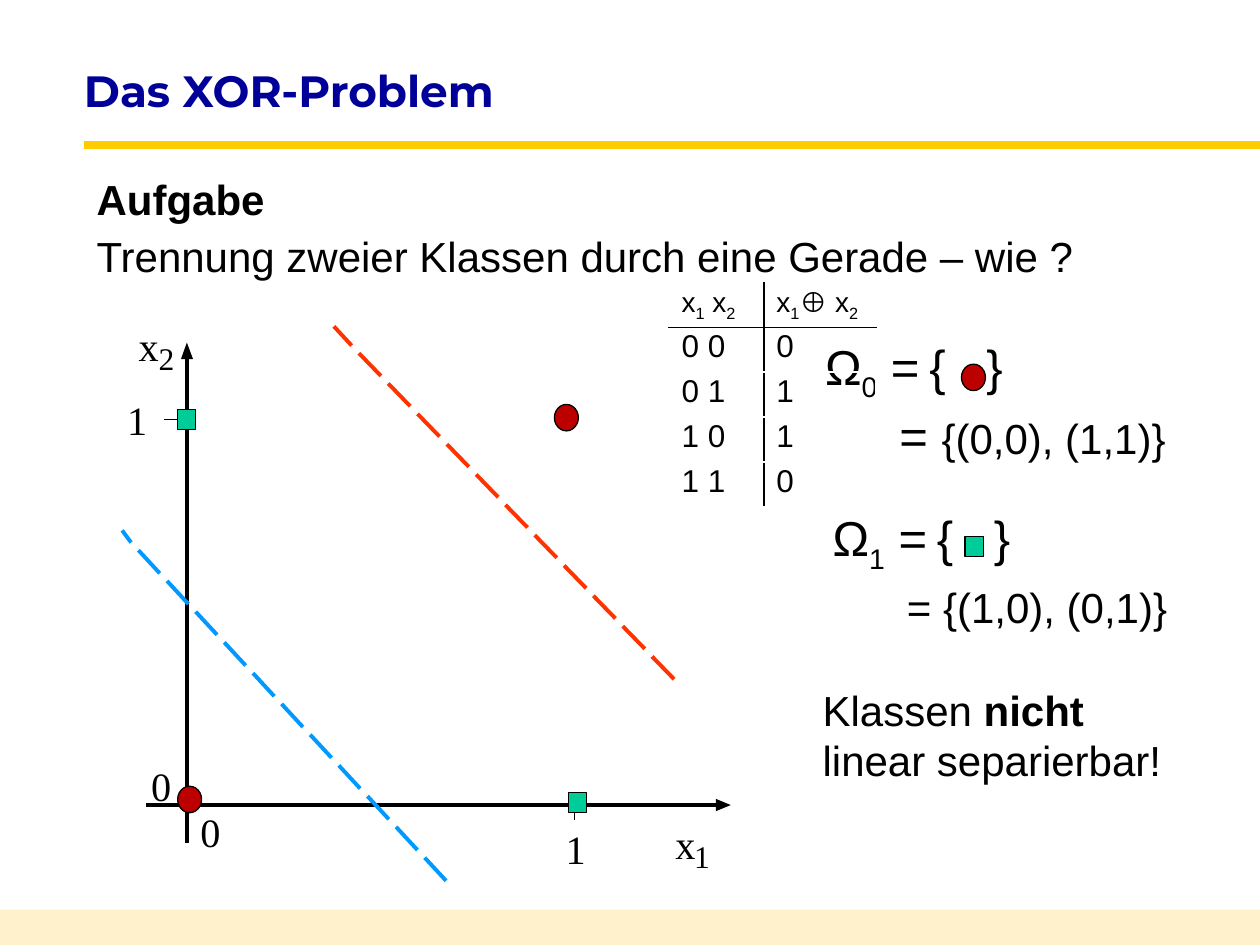
from dataclasses import dataclass

from lxml import etree
from pptx import Presentation
from pptx.dml.color import RGBColor
from pptx.enum.shapes import MSO_CONNECTOR, MSO_SHAPE
from pptx.enum.text import MSO_ANCHOR, MSO_AUTO_SIZE, PP_ALIGN
from pptx.oxml.ns import qn
from pptx.util import Pt

STRAIGHT = MSO_CONNECTOR.STRAIGHT
RECT, OVAL = MSO_SHAPE.RECTANGLE, MSO_SHAPE.OVAL
TOP, MIDDLE = MSO_ANCHOR.TOP, MSO_ANCHOR.MIDDLE
LEFT = PP_ALIGN.LEFT
NO_FIT = MSO_AUTO_SIZE.NONE


@dataclass(frozen=True)
class Theme:
    sans: str = "Arial"
    serif: str = "Times New Roman"
    head: str = "Montserrat"
    black: str = "000000"
    navy: str = "000099"
    gold: str = "FFCC00"
    cream: str = "FFE499"
    red: str = "BC0000"
    green: str = "00CC99"
    blue: str = "0099FF"
    flame: str = "FF3300"
    title: int = 25
    body: int = 24
    label: int = 23
    index: int = 18
    omega: int = 28
    thin: int = 20
    cell: int = 18
    top: int = 16


@dataclass
class Run:
    text: str
    size: int = 0
    bold: bool = False
    sub: bool = False
    track: float = 0


class Board:
    def __init__(self, slide, theme):
        self.slide, self.shapes, self.theme = slide, slide.shapes, theme

    def para(self, frame, runs, size, first=True, font=None, color=None,
             bold=False, line=None, gap=0, hang=0):
        p = frame.paragraphs[0] if first else frame.add_paragraph()
        p.alignment = LEFT
        if line:
            p.line_spacing = line
        p.space_before = Pt(gap)
        props = p._p.get_or_add_pPr()
        props.set("marL", str(Pt(hang)))
        props.set("indent", str(-Pt(hang)))
        etree.SubElement(props, qn("a:buNone"))
        p.font.name = font or self.theme.sans
        p.font.size = Pt(size)
        p.font.bold = bold
        p.font.color.rgb = RGBColor.from_string(color or self.theme.black)
        for item in runs:
            r = p.add_run()
            r.text = item.text
            if item.size:
                r.font.size = Pt(item.size)
            if item.bold:
                r.font.bold = True
            if item.sub:
                r._r.get_or_add_rPr().set("baseline", "-25000")
            if item.track:
                r._r.get_or_add_rPr().set("spc", str(round(item.track * 100)))

    def place(self, holder, left, top, width, height, anchor, inset=7.2):
        holder.left, holder.top = Pt(left), Pt(top)
        holder.width, holder.height = Pt(width), Pt(height)
        frame = holder.text_frame
        frame.word_wrap, frame.auto_size = True, NO_FIT
        frame.vertical_anchor = anchor
        frame.margin_left = Pt(inset)
        return frame

    def text(self, left, top, width, height):
        box = self.shapes.add_textbox(Pt(left), Pt(top), Pt(width), Pt(height))
        box.text_frame.word_wrap = True
        return box.text_frame

    def label(self, text, left, top, size):
        frame = self.text(left, top, size / 2, size * 1.18)
        frame.word_wrap = False
        frame.margin_left = frame.margin_right = 0
        frame.margin_top = frame.margin_bottom = 0
        self.para(frame, [Run(text)], size, font=self.theme.serif)

    def paint(self, shape, color, width=0):
        shape.shadow.inherit = False
        shape.fill.solid()
        shape.fill.fore_color.rgb = RGBColor.from_string(color)
        if width:
            shape.line.color.rgb = RGBColor.from_string(self.theme.black)
            shape.line.width = Pt(width)
        else:
            shape.line.fill.background()

    def shape(self, kind, left, top, width, height, color, edge=0):
        shape = self.shapes.add_shape(
            kind, Pt(left), Pt(top), Pt(width), Pt(height))
        self.paint(shape, color, edge)
        return shape

    def dot(self, left, top):
        self.shape(OVAL, left, top, 13.7, 15.1, self.theme.red, 0.75)

    def square(self, left, top):
        self.shape(RECT, left, top, 10.4, 11.5, self.theme.green, 0.75)

    def line(self, start, end, color, width, shapes=None):
        line = (shapes or self.shapes).add_connector(
            STRAIGHT, *(Pt(v) for v in (*start, *end)))
        line.line.color.rgb = RGBColor.from_string(color)
        line.line.width = Pt(width)
        etree.SubElement(line._element.spPr, qn("a:effectLst"))

    def dashes(self, start, step, dash, end, color, count=12):
        group = self.shapes.add_group_shape()
        for i in range(count):
            head = [s + i * d for s, d in zip(start, step)]
            tail = [max(h + d, e) for h, d, e in zip(head, dash, end)]
            self.line(head, tail, color, 2.25, group.shapes)

    def arrow(self, *points):
        build = self.shapes.build_freeform(
            *(Pt(v) for v in points[0]), scale=1.0)
        build.add_line_segments(
            [(Pt(x), Pt(y)) for x, y in points[1:]], close=True)
        self.paint(build.convert_to_shape(), self.theme.black)

    def edge(self, cell, side):
        ln = etree.SubElement(
            cell._tc.get_or_add_tcPr(), qn("a:ln" + side), w=str(Pt(1)))
        fill = etree.SubElement(ln, qn("a:solidFill"))
        etree.SubElement(fill, qn("a:srgbClr"), val=self.theme.black)

    def table(self, left, top, cols, rows, data):
        grid = self.shapes.add_table(
            len(rows), len(cols), Pt(left), Pt(top),
            Pt(sum(cols)), Pt(sum(rows))).table
        grid.first_row = grid.horz_banding = False
        for col, width in zip(grid.columns, cols):
            col.width = Pt(width)
        for i, (row, height) in enumerate(zip(grid.rows, rows)):
            row.height = Pt(height)
            for j, cell in enumerate(row.cells):
                self.edge(cell, "L" if j else "R")
                if i < 2:
                    self.edge(cell, "T" if i else "B")
                cell.fill.background()
                size = self.theme.cell if i else self.theme.top
                self.para(cell.text_frame, data[i][j], size, line=0.85)

    def group(self, left, top, index, items, line, gap, sign):
        t = self.theme
        frame = self.text(left, top, 225, 74)
        self.para(frame, [Run("Ω"), Run(index, sub=True), Run(" ="),
                          Run(" ", t.thin), Run("{"),
                          Run(" ", track=15.56), Run("}")], t.omega, hang=42.5)
        self.para(frame, [Run("\t= ", sign), Run(items)], t.body,
                  first=False, line=line, gap=gap, hang=42.5)


def main():
    deck = Presentation()
    deck.slide_width, deck.slide_height = Pt(720), Pt(540)
    t = Theme()
    b = Board(deck.slides.add_slide(deck.slide_layouts[1]), t)
    title, body = b.slide.placeholders

    bar = b.shape(RECT, 0, 519.8, 720, 20.2, t.cream)
    tint = bar._element.spPr.find(".//" + qn("a:srgbClr"))
    etree.SubElement(tint, qn("a:alpha"), val="50000")
    b.line((48, 82.8), (720, 82.8), t.gold, 4.5)

    frame = b.place(title, 48, 31.7, 521, 39.6, MIDDLE, 0)
    b.para(frame, [Run("Das XOR-Problem")], t.title,
           font=t.head, color=t.navy, bold=True)
    frame = b.place(body, 48, 100, 672, 71.3, TOP)
    b.para(frame, [Run("Aufgabe")], t.body, bold=True, line=0.85)
    b.para(frame, [Run("Trennung zweier Klassen durch eine Gerade – wie ?")],
           t.body, first=False, line=0.65, gap=12.4)

    b.arrow((106.8, 205.2), (110.3, 205.2), (106.8, 195.8), (103.4, 205.2))
    b.line((106.8, 205.2), (106.8, 481.7), t.black, 0)
    b.arrow((409, 460.1), (409, 463.6), (417.6, 460.1), (409, 456.5))
    b.line((409, 460.1), (83.5, 460.1), t.black, 0)
    for text, left, top, size in (
            ("x", 385.9, 468, t.label), ("1", 396.7, 478.1, t.index),
            ("x", 79.2, 183.6, t.label), ("2", 90.7, 193.7, t.index),
            ("0", 114.5, 461.5, t.label), ("1", 323.3, 470.9, t.label),
            ("0", 86.4, 434.9, t.label), ("1", 72.7, 226.1, t.label)):
        b.label(text, left, top, size)

    b.dashes((254.9, 503.3), (-16.36, -17.57), (-12.2, -13.2),
             (69.8, 303.1), t.blue)
    b.dashes((385.2, 388.1), (-16.75, -17.33), (-12.6, -12.96),
             (190.8, 186.5), t.flame)

    b.line((328.3, 459.4), (328.3, 468.7), t.black, 0.75)
    b.line((93.6, 239.8), (106.6, 239.8), t.black, 0.75)
    for spot in ((101.5, 449.3), (316.8, 231.1), (549.4, 208.1)):
        b.dot(*spot)
    for spot in ((324.7, 452.9), (101.5, 234), (551.5, 306.7)):
        b.square(*spot)

    b.group(464.4, 188.6, "0", "{(0,0), (1,1)}", 0.5, 16, t.omega)
    b.group(468.7, 286.6, "1", "{(1,0), (0,1)}", 0.6, 14, t.body)
    frame = b.text(463, 387.4, 223.2, 64.8)
    b.para(frame, [Run("Klassen "), Run("nicht", bold=True),
                   Run(" linear separierbar!")], t.body)

    one, two = Run("1", sub=True), Run("2", sub=True)
    data = [[[Run("x"), one, Run(" x"), two],
             [Run("x"), one, Run("⊕ x"), two]]]
    data += [[[Run(f"{x} {y}")], [Run(str(x ^ y))]]
             for x in (0, 1) for y in (0, 1)]
    b.table(382.3, 161.3, (54.2, 64.1), (24,) + (25.5,) * 4, data)
    deck.save("out.pptx")


if __name__ == "__main__":
    main()
